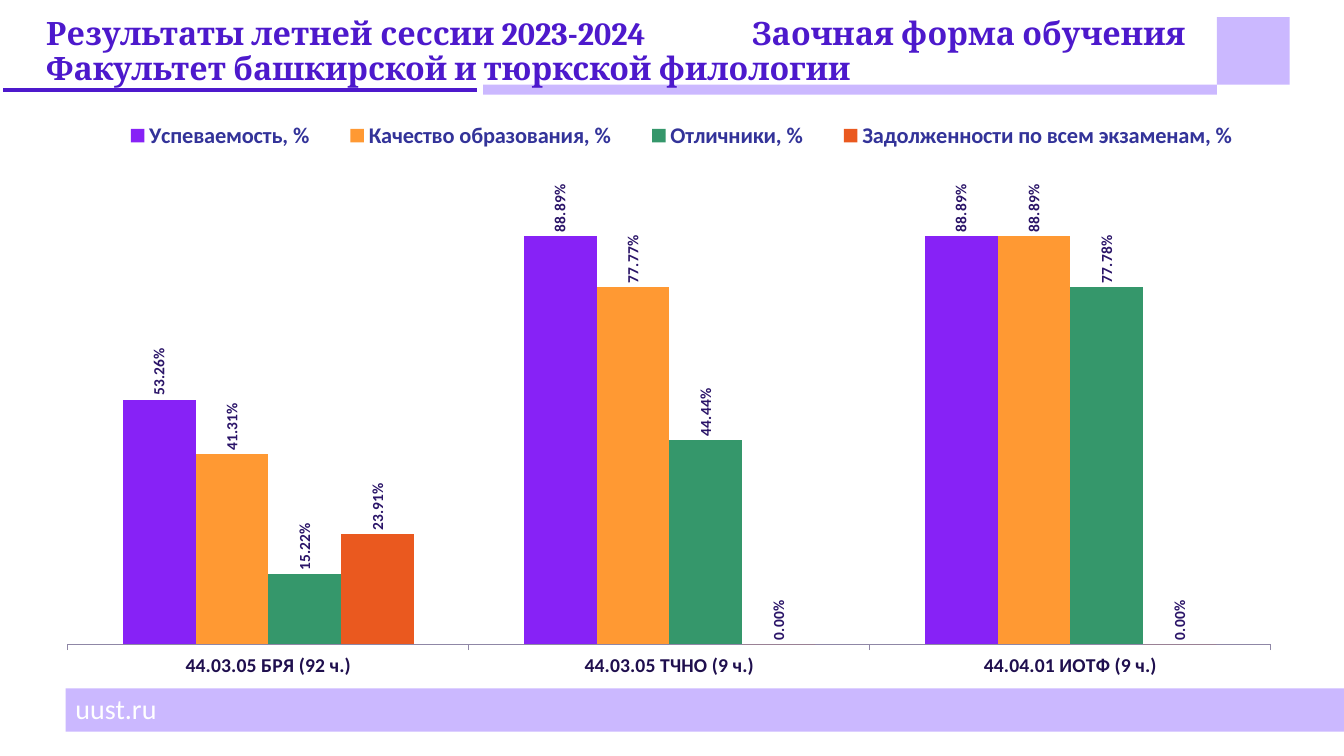
import pptx
import pptx.util
import pptx.chart.data
import pptx.dml.color
import pptx.enum.chart
import pptx.enum.shapes
import pptx.enum.text
import pptx.oxml
import pptx.oxml.ns
from lxml import etree

WIDTH, HEIGHT = 13.33, 7.5
COLORS = {"lilac": "CBB8FF", "violet": "4D19CC", "white": "FFFFFF", "label": "2A1468",
          "category": "1F0F4E", "legend": "333399", "axis": "8F87A6"}
TITLE_LINES = [
    [("Результаты летней", 23), (" ", 24), ("сессии 2023-2024\tЗаочная форма обучения", 23)],
    [("Факультет башкирской и тюркской филологии", 23)],
]
TITLE_TAB = 7
SITE = "uust.ru"
PROGRAMS = ["44.03.05 БРЯ (92 ч.)", "44.03.05 ТЧНО (9 ч.)", "44.04.01 ИОТФ (9 ч.)"]
RESULTS = [
    ("Успеваемость, %", "8722F6", (0.5326, 0.8889, 0.8889)),
    ("Качество образования, %", "FF9933", (0.4131, 0.7777, 0.8889)),
    ("Отличники, %", "35976B", (0.1522, 0.4444, 0.7778)),
    ("Задолженности по всем экзаменам, %", "EA591F", (0.2391, 0, 0)),
]
PERCENT = "0.00%"
MARGIN, RULE_TOP, RULE_HEIGHT = 0.65, 0.84, 0.1
SQUARE_LEFT, SQUARE_TOP, SQUARE_WIDTH = 12.07, 0.17, 0.72
FOOTER_TOP, FOOTER_HEIGHT = 6.83, 0.43
BARS = [
    (0, RULE_TOP, SQUARE_LEFT, RULE_HEIGHT, "lilac", None),
    (MARGIN, FOOTER_TOP, WIDTH - MARGIN, FOOTER_HEIGHT, "lilac", None),
    (0, RULE_TOP, 4.76, RULE_HEIGHT, "violet", "white"),
    (SQUARE_LEFT, SQUARE_TOP, SQUARE_WIDTH, RULE_TOP - SQUARE_TOP, "lilac", None),
]
CHART_BOX = (0.46, 1.09, 12.6, 5.7)
PLOT_SHARES = (0.017, 0.131, 0.947, 0.799)
LEGEND_SHARES = (0.04, 0.01, 0.92, 0.07)


def inches(*lengths):
    return [pptx.util.Inches(length) for length in lengths]


def rgb(value):
    return pptx.dml.color.RGBColor.from_string(value)


def set_font(font, size, color, name="Calibri", bold=False):
    font.size = pptx.util.Pt(size)
    font.name = name
    font.bold = bold
    font.color.rgb = rgb(COLORS[color])


def add_bar(slide, left, top, width, height, fill, line):
    shape = slide.shapes.add_shape(pptx.enum.shapes.MSO_SHAPE.RECTANGLE,
                                   *inches(left, top, width, height))
    shape.shadow.inherit = False
    shape.fill.solid()
    shape.fill.fore_color.rgb = rgb(COLORS[fill])
    if line:
        shape.line.color.rgb = rgb(COLORS[line])
        shape.line.width = pptx.util.Pt(4.5)
    else:
        shape.line.fill.background()


def add_text(slide, box, lines, color, font_name, bold, anchor, tab=None):
    frame = slide.shapes.add_textbox(*inches(*box)).text_frame
    frame.word_wrap = True
    frame.vertical_anchor = anchor
    paragraph = frame.paragraphs[0]
    paragraph.line_spacing = 0.9
    if tab:
        properties = paragraph._p.get_or_add_pPr()
        tabs = etree.SubElement(properties, pptx.oxml.ns.qn("a:tabLst"))
        etree.SubElement(tabs, pptx.oxml.ns.qn("a:tab"),
                         pos=str(pptx.util.Inches(tab)), algn="l")
    for index, line in enumerate(lines):
        if index:
            paragraph.add_line_break()
        for text, size in line:
            run = paragraph.add_run()
            run.text = text
            set_font(run.font, size, color, font_name, bold)


def layout(shares, inner=False):
    target = '<c:layoutTarget val="inner"/>' if inner else ""
    modes = "".join(f'<c:{axis}Mode val="edge"/>' for axis in "xy")
    places = "".join(f'<c:{key} val="{share}"/>' for key, share in zip("xywh", shares))
    return pptx.oxml.parse_xml(
        f'<c:layout {pptx.oxml.ns.nsdecls("c")}><c:manualLayout>'
        f'{target}{modes}{places}</c:manualLayout></c:layout>')


def add_results_chart(slide):
    data = pptx.chart.data.CategoryChartData(number_format=PERCENT)
    data.categories = PROGRAMS
    for name, _, values in RESULTS:
        data.add_series(name, values)
    chart = slide.shapes.add_chart(pptx.enum.chart.XL_CHART_TYPE.COLUMN_CLUSTERED,
                                   *inches(*CHART_BOX), data).chart
    chart.has_title = False
    set_font(chart.font, 18, "label")

    chart.has_legend = True
    legend = chart.legend
    legend.position = pptx.enum.chart.XL_LEGEND_POSITION.TOP
    legend.include_in_layout = False
    set_font(legend.font, 16, "legend", bold=True)
    for old in legend._element.findall(pptx.oxml.ns.qn("c:layout")):
        legend._element.remove(old)
    legend._element.find(pptx.oxml.ns.qn("c:legendPos")).addnext(layout(LEGEND_SHARES))

    plot_area = chart._chartSpace.chart.plotArea
    for old in plot_area.findall(pptx.oxml.ns.qn("c:layout")):
        plot_area.remove(old)
    plot_area.insert(0, layout(PLOT_SHARES, inner=True))

    value_axis = chart.value_axis
    value_axis.minimum_scale, value_axis.maximum_scale = 0, 1
    value_axis.has_major_gridlines = False
    value_axis.visible = False
    category_axis = chart.category_axis
    category_axis.major_tick_mark = pptx.enum.chart.XL_TICK_MARK.OUTSIDE
    category_axis.format.line.color.rgb = rgb(COLORS["axis"])
    category_axis.format.line.width = pptx.util.Pt(0.75)
    set_font(category_axis.tick_labels.font, 14, "category", bold=True)

    plot = chart.plots[0]
    plot.vary_by_categories = False
    plot.gap_width, plot.overlap = 150, 0
    for series, (_, color, _) in zip(plot.series, RESULTS):
        series.format.fill.solid()
        series.format.fill.fore_color.rgb = rgb(color)
        series.invert_if_negative = False
        labels = series.data_labels
        labels.show_value = True
        labels.number_format, labels.number_format_is_linked = PERCENT, False
        labels.position = pptx.enum.chart.XL_LABEL_POSITION.OUTSIDE_END
        set_font(labels.font, 11, "label", bold=True)
        body = labels._element.find(".//" + pptx.oxml.ns.qn("a:bodyPr"))
        body.set("rot", "-5400000")
        body.set("vert", "horz")


def main():
    presentation = pptx.Presentation()
    presentation.slide_width, presentation.slide_height = inches(WIDTH, HEIGHT)
    slide = presentation.slides.add_slide(presentation.slide_layouts[6])
    for bar in BARS:
        add_bar(slide, *bar)
    anchors = pptx.enum.text.MSO_ANCHOR
    add_text(slide, (MARGIN, FOOTER_TOP, 1.56, FOOTER_HEIGHT), [[(SITE, 20)]],
             "white", "Calibri", False, anchors.MIDDLE)
    add_text(slide, (0.36, 0.11, 11.67, 0.46), TITLE_LINES,
             "violet", "Cambria", True, anchors.TOP, TITLE_TAB)
    add_results_chart(slide)
    presentation.save("out.pptx")


if __name__ == "__main__":
    main()
